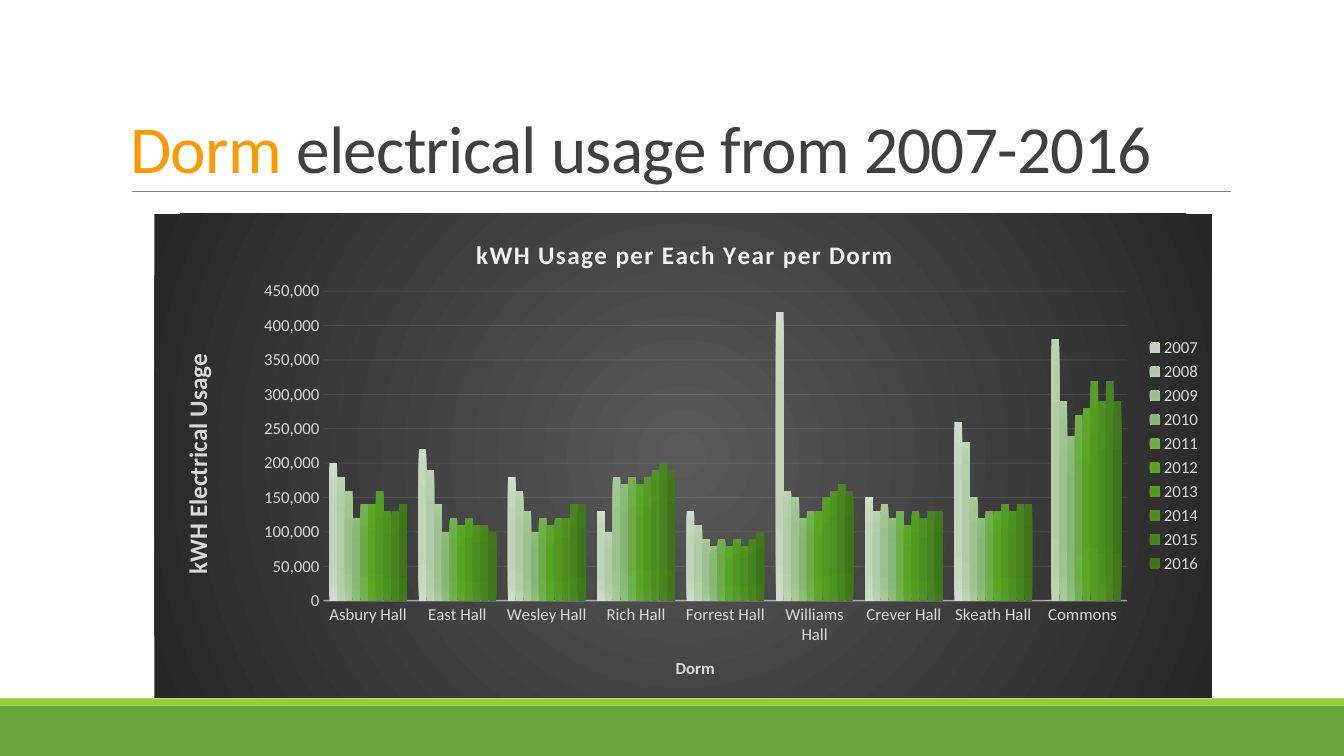
from dataclasses import dataclass

from lxml.etree import SubElement
from pptx import Presentation
from pptx.chart.data import CategoryChartData
from pptx.dml.color import RGBColor
from pptx.enum.chart import XL_CHART_TYPE, XL_LEGEND_POSITION, XL_TICK_MARK
from pptx.enum.shapes import MSO_CONNECTOR, MSO_SHAPE
from pptx.enum.text import MSO_ANCHOR, MSO_AUTO_SIZE, PP_ALIGN
from pptx.oxml.ns import qn
from pptx.util import Inches, Pt


@dataclass(frozen=True)
class Theme:
    font: str = "Calibri"
    accent: str = "FF9900"
    heading: str = "404040"
    rule: str = "808080"
    band: str = "63A537"
    band_edge: str = "99CB38"
    chart_light: str = "F2F2F2"
    chart_text: str = "D9D9D9"
    backdrop: tuple = ((0, "595959"), (100, "262626"))
    title_size: float = 48
    chart_title_size: float = 18
    label_size: float = 12


DORMS = ["Asbury Hall", "East Hall", "Wesley Hall", "Rich Hall", "Forrest Hall",
         "Williams Hall", "Crever Hall", "Skeath Hall", "Commons"]

# Usage per dorm in thousands of kWh
USAGE = {
    "2007": [200, 220, 180, 130, 130, 420, 150, 260, 0],
    "2008": [180, 190, 160, 100, 110, 160, 130, 230, 380],
    "2009": [160, 140, 130, 180, 90, 150, 140, 150, 290],
    "2010": [120, 100, 100, 170, 80, 120, 120, 120, 240],
    "2011": [140, 120, 120, 180, 90, 130, 130, 130, 270],
    "2012": [140, 110, 110, 170, 80, 130, 110, 130, 280],
    "2013": [160, 120, 120, 180, 90, 150, 130, 140, 320],
    "2014": [130, 110, 120, 190, 80, 160, 120, 130, 290],
    "2015": [130, 110, 140, 200, 90, 170, 130, 140, 320],
    "2016": [140, 100, 140, 190, 100, 160, 130, 140, 290],
}

# Gradient colours of each year, at the stops below
STOPS = (0, 34, 70, 100)
SHADES = {
    "2007": ("BFD2B9", "C2D3BB", "C4D7BE", "CEDFC9"),
    "2008": ("AEC9A5", "B1CAA7", "B3CEA9", "BDD4B4"),
    "2009": ("9BBF8D", "9DC08F", "9FC491", "A8C99B"),
    "2010": ("86B672", "88B674", "89BA74", "92BD80"),
    "2011": ("69AC47", "6BAC49", "6CB049", "74B054"),
    "2012": ("56A423", "58A326", "59A824", "5FA530"),
    "2013": ("519921", "529923", "539D21", "599B2D"),
    "2014": ("4B8F1E", "4D8E21", "4D931F", "53902A"),
    "2015": ("45821C", "46821E", "46861C", "4B8326"),
    "2016": ("3D7419", "3E731B", "3F7719", "437522"),
}


def add_text(para, text, *, font, size, color, bold=False, spacing=0):
    span = para.add_run()
    span.text = text
    span.font.name = font
    span.font.size = Pt(size)
    span.font.bold = bold
    span.font.color.rgb = RGBColor.from_string(color)
    if spacing:
        span.font._element.set("spc", str(round(spacing * 100)))


def radial_fill(properties, stops, focus):
    gradient = SubElement(properties, qn("a:gradFill"), rotWithShape="1")
    stop_list = SubElement(gradient, qn("a:gsLst"))
    for position, color in stops:
        stop = SubElement(stop_list, qn("a:gs"), pos=str(position * 1000))
        SubElement(stop, qn("a:srgbClr"), val=color)
    circle = SubElement(gradient, qn("a:path"), path="circle")
    SubElement(circle, qn("a:fillToRect"), {side: str(focus * 1000) for side in "ltrb"})


def style_line(line, color, width, opacity):
    line.color.rgb = RGBColor.from_string(color)
    line.width = Pt(width)
    for tone in line._ln.iter(qn("a:srgbClr")):
        SubElement(tone, qn("a:alpha"), val=str(opacity * 1000))


def place(element, index, **fractions):
    """Fix a chart part at fractions of the chart area."""
    layout = element.find(qn("c:layout"))
    if layout is None:
        layout = SubElement(element, qn("c:layout"))
        element.insert(index, layout)
    manual = SubElement(layout, qn("c:manualLayout"))
    if "w" in fractions:
        SubElement(manual, qn("c:layoutTarget"), val="inner")
    for side in ("x", "y"):
        SubElement(manual, qn(f"c:{side}Mode"), val="edge")
    for side, value in fractions.items():
        SubElement(manual, qn(f"c:{side}"), val=str(value))


class SlideBuilder:
    def __init__(self, slide, theme):
        self.slide = slide
        self.theme = theme

    def band(self, left, top, width, height, color):
        box = self.slide.shapes.add_shape(MSO_SHAPE.RECTANGLE, Inches(left), Inches(top),
                                          Inches(width), Inches(height))
        box.shadow.inherit = False
        box.fill.solid()
        box.fill.fore_color.rgb = RGBColor.from_string(color)
        box.line.fill.background()

    def rule(self, left, right, top):
        line = self.slide.shapes.add_connector(MSO_CONNECTOR.STRAIGHT, Inches(left),
                                               Inches(top), Inches(right), Inches(top))
        line.line.color.rgb = RGBColor.from_string(self.theme.rule)
        line.line.width = Pt(0.5)
        SubElement(line._element.spPr, qn("a:effectLst"))

    def title(self, left, top, width, height, parts):
        box = self.slide.shapes.title
        box.left, box.top = Inches(left), Inches(top)
        box.width, box.height = Inches(width), Inches(height)
        frame = box.text_frame
        frame.word_wrap = True
        frame.auto_size = MSO_AUTO_SIZE.NONE
        frame.vertical_anchor = MSO_ANCHOR.BOTTOM
        para = frame.paragraphs[0]
        para.alignment = PP_ALIGN.LEFT
        para.line_spacing = 0.85
        for text, color in parts:
            add_text(para, text, font=self.theme.font, size=self.theme.title_size,
                     color=color, spacing=-0.5)

    def chart_heading(self, heading, text, size, color, x, y, spacing=0, rotation=0):
        frame = heading.text_frame
        add_text(frame.paragraphs[0], text, font=self.theme.font, size=size,
                 color=color, bold=True, spacing=spacing)
        body = frame._txBody.find(qn("a:bodyPr"))
        body.set("rot", str(rotation * 60000))
        body.set("vert", "horz")
        place(heading._element, 1, x=x, y=y)

    def label_font(self, font):
        font.name = self.theme.font
        font.size = Pt(self.theme.label_size)
        font.color.rgb = RGBColor.from_string(self.theme.chart_text)

    def usage_chart(self, left, top, width, height):
        theme = self.theme
        data = CategoryChartData(number_format="#,##0")
        data.categories = DORMS
        for year, thousands in USAGE.items():
            data.add_series(year, [value * 1000 for value in thousands])
        chart = self.slide.shapes.add_chart(
            XL_CHART_TYPE.COLUMN_CLUSTERED, Inches(left), Inches(top),
            Inches(width), Inches(height), data).chart

        # Backdrop and plot
        self.label_font(chart.font)
        space = chart._chartSpace
        backdrop = SubElement(space, qn("c:spPr"))
        space.find(qn("c:txPr")).addprevious(backdrop)
        radial_fill(backdrop, theme.backdrop, 50)
        place(space.chart.plotArea, 0, x=0.16, y=0.16, w=0.76, h=0.64)
        plot = chart.plots[0]
        plot.gap_width = 150
        plot.overlap = 0
        plot.vary_by_categories = False
        for series in plot.series:
            radial_fill(series._element.get_or_add_spPr(),
                        zip(STOPS, SHADES[series.name]), 100)

        # Axes
        dorms, usage = chart.category_axis, chart.value_axis
        for axis in (dorms, usage):
            axis.major_tick_mark = axis.minor_tick_mark = XL_TICK_MARK.NONE
            self.label_font(axis.tick_labels.font)
        style_line(dorms.format.line, theme.chart_light, 1, 54)
        usage.format.line.fill.background()
        usage.minimum_scale, usage.maximum_scale, usage.major_unit = 0, 450000, 50000
        usage.tick_labels.number_format = "#,##0"
        usage.tick_labels.number_format_is_linked = False
        style_line(usage.major_gridlines.format.line, theme.chart_light, 0.75, 10)

        # Headings and legend
        self.chart_heading(chart.chart_title, "kWH Usage per Each Year per Dorm",
                           theme.chart_title_size, theme.chart_light, 0.3, 0.04, spacing=1)
        self.chart_heading(dorms.axis_title, "Dorm", theme.label_size,
                           theme.chart_text, 0.49, 0.91)
        self.chart_heading(usage.axis_title, "kWH Electrical Usage", theme.chart_title_size,
                           theme.chart_text, 0.02, 0.28, rotation=-90)
        chart.has_legend = True
        chart.legend.position = XL_LEGEND_POSITION.RIGHT
        chart.legend.include_in_layout = False
        self.label_font(chart.legend.font)


def main():
    deck = Presentation()
    deck.slide_width, deck.slide_height = Inches(13.33), Inches(7.5)
    theme = Theme()
    page = SlideBuilder(deck.slides.add_slide(deck.slide_layouts[5]), theme)
    page.band(0, 7, 13.33, 0.5, theme.band)
    page.band(0, 6.93, 13.33, 0.07, theme.band_edge)
    page.rule(1.31, 12.21, 1.9)
    page.title(1.19, 0.29, 10.83, 1.62, [("Dorm", theme.accent),
               (" electrical usage from 2007-2016", theme.heading)])
    page.usage_chart(1.53, 2.12, 10.49, 4.8)
    deck.save("out.pptx")


if __name__ == "__main__":
    main()
